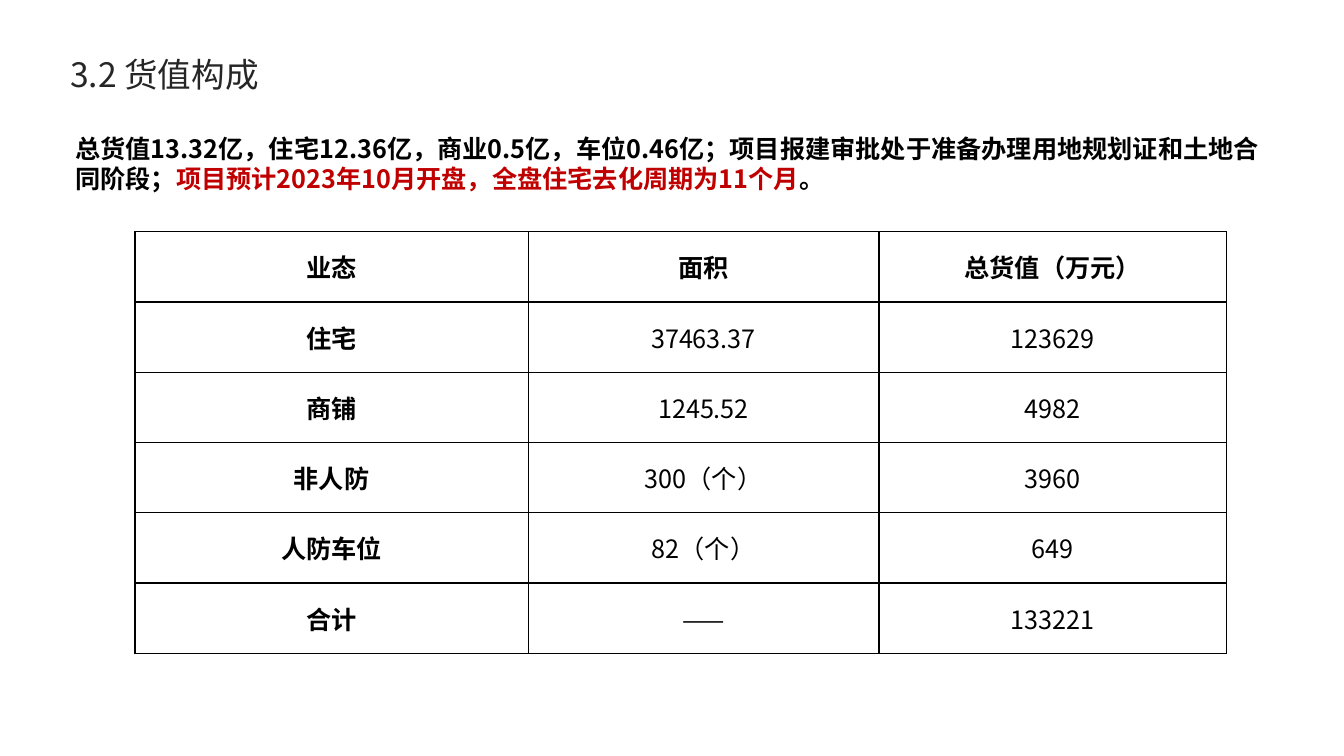
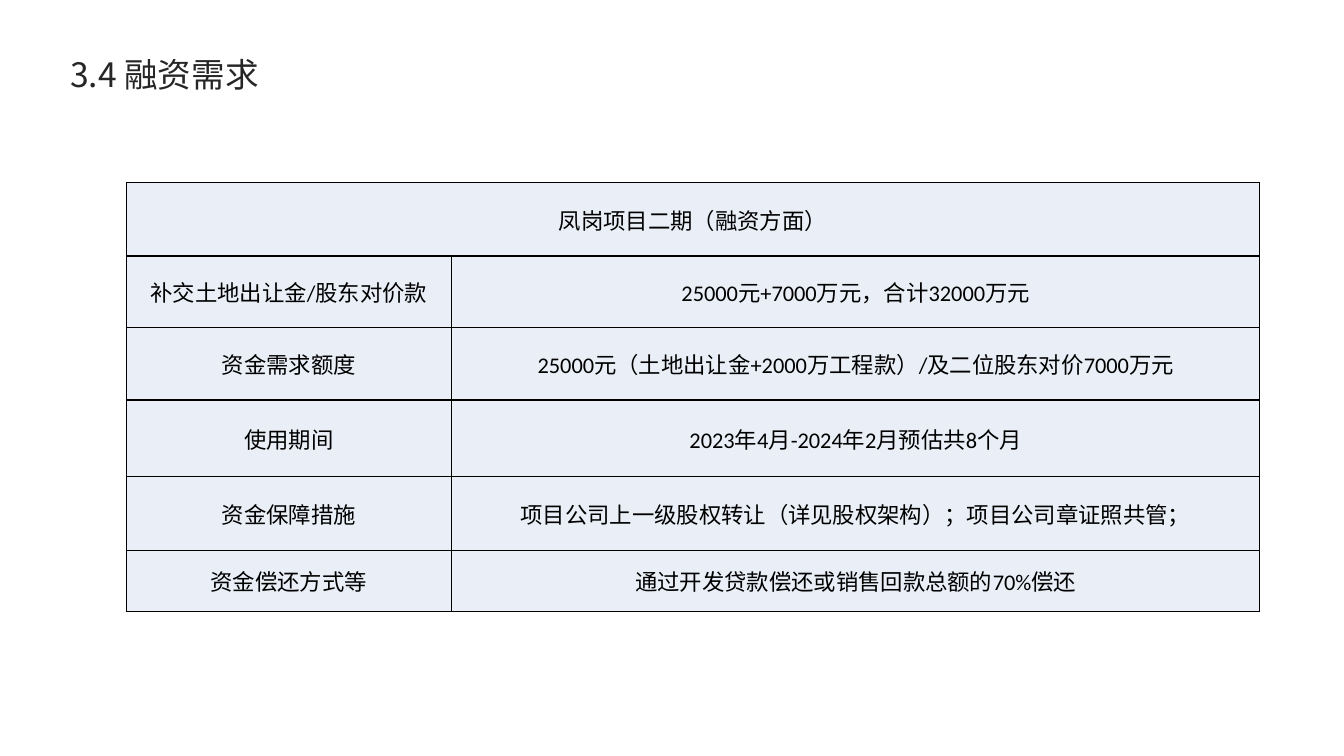
from lxml import etree
from pptx import Presentation
from pptx.dml.color import RGBColor
from pptx.enum.text import MSO_ANCHOR, MSO_AUTO_SIZE, PP_ALIGN
from pptx.oxml.ns import qn
from pptx.util import Cm, Pt

BLACK = RGBColor(0x00, 0x00, 0x00)
WHITE = RGBColor(0xFF, 0xFF, 0xFF)
CHARCOAL = RGBColor(0x26, 0x26, 0x26)
RED = RGBColor(0xC0, 0x00, 0x00)
PALE_BLUE = RGBColor(0xEA, 0xEF, 0xF7)
SANS = "Noto Sans CJK SC"
CALIBRI = "Calibri"
MIDDLE, BOTTOM = MSO_ANCHOR.MIDDLE, MSO_ANCHOR.BOTTOM
CENTER = PP_ALIGN.CENTER
GROW = MSO_AUTO_SIZE.SHAPE_TO_FIT_TEXT
BORDER_SIDES = ("a:lnL", "a:lnR", "a:lnT", "a:lnB")


class Report:
    """Holds the deck, its style and the current page."""

    def __init__(self):
        self.deck = Presentation()
        self.deck.slide_width, self.deck.slide_height = Cm(33.87), Cm(19.05)
        self.page = None

    def add_page(self, title):
        self.page = self.deck.slides.add_slide(self.deck.slide_layouts[6])
        frame = self.text_frame(1.52, 1.07, 25.4, 1.45)
        frame.vertical_anchor = BOTTOM
        para = frame.paragraphs[0]
        para.text = title
        para.line_spacing = 0.9
        self.style(para, 24, color=CHARCOAL)

    def text_frame(self, left, top, width, height):
        box = self.page.shapes.add_textbox(Cm(left), Cm(top), Cm(width), Cm(height))
        box.text_frame.word_wrap = True
        return box.text_frame

    def style(self, para, size, face=SANS, color=BLACK, bold=False):
        font = para.font
        font.size, font.bold = Pt(size), bold
        font.color.rgb = color
        font.name = face
        defaults = para._p.pPr.find(qn("a:defRPr"))
        etree.SubElement(defaults, qn("a:ea"), typeface=SANS)

    def add_summary(self, spans):
        frame = self.text_frame(1.65, 3.23, 30.84, 1.8)
        frame.auto_size = GROW
        para = frame.paragraphs[0]
        self.style(para, 18, bold=True)
        for text, color in spans:
            span = para.add_run()
            span.text = text
            span.font.color.rgb = color

    def add_grid(self, left, top, widths, heights, rows):
        table = self.page.shapes.add_table(
            len(heights), len(widths), Cm(left), Cm(top),
            Cm(sum(widths)), Cm(sum(heights))).table
        table.first_row = table.horz_banding = False
        for column, width in zip(table.columns, widths):
            column.width = Cm(width)
        for row, height in zip(table.rows, heights):
            row.height = Cm(height)
        for row, texts in zip(table.rows, rows):
            for cell, text in zip(row.cells, texts):
                cell.text = text
        return table

    def format_cell(self, cell, fill, size, face=SANS, bold=False):
        cell.vertical_anchor = MIDDLE
        properties = cell._tc.get_or_add_tcPr()
        for side in BORDER_SIDES:
            line = etree.SubElement(properties, qn(side), w=str(Pt(1)))
            paint = etree.SubElement(line, qn("a:solidFill"))
            etree.SubElement(paint, qn("a:srgbClr"), val=str(BLACK))
        cell.fill.solid()
        cell.fill.fore_color.rgb = fill
        para = cell.text_frame.paragraphs[0]
        para.alignment = CENTER
        self.style(para, size, face, bold=bold)

    def add_value_table(self, rows):
        table = self.add_grid(3.4, 5.84, (9.91, 8.84, 8.76), [1.77] * len(rows), rows)
        for row_index, row in enumerate(table.rows):
            for column_index, cell in enumerate(row.cells):
                heading = row_index == 0 or column_index == 0
                self.format_cell(cell, WHITE, 18, bold=heading)

    def add_funding_table(self, heading, rows):
        heights = (1.85, 1.8, 1.83, 1.93, 1.87, 1.52)
        table = self.add_grid(3.18, 4.6, (8.2, 20.37), heights, [(heading,), *rows])
        for cell in table.iter_cells():
            cell.margin_left = cell.margin_right = 0
            cell.margin_top = cell.margin_bottom = 0
            self.format_cell(cell, PALE_BLUE, 16, CALIBRI)
        table.cell(0, 0).merge(table.cell(0, 1))


def main():
    report = Report()

    report.add_page("3.2 货值构成")
    report.add_value_table([
        ("业态", "面积", "总货值（万元）"),
        ("住宅", "37463.37", "123629"),
        ("商铺", "1245.52", "4982"),
        ("非人防", "300（个）", "3960"),
        ("人防车位", "82（个）", "649"),
        ("合计", "——", "133221"),
    ])
    report.add_summary([
        ("总货值13.32亿，住宅12.36亿，商业0.5亿，车位0.46亿；"
         "项目报建审批处于准备办理用地规划证和土地合同阶段；", BLACK),
        ("项目预计2023年10月开盘，全盘住宅去化周期为11个月", RED),
        ("。", BLACK),
    ])

    report.add_page("3.4 融资需求")
    report.add_funding_table("凤岗项目二期（融资方面）", [
        ("补交土地出让金/股东对价款", "25000元+7000万元，合计32000万元"),
        ("资金需求额度", "25000元（土地出让金+2000万工程款）/及二位股东对价7000万元"),
        ("使用期间", "2023年4月-2024年2月预估共8个月"),
        ("资金保障措施", "项目公司上一级股权转让（详见股权架构）；项目公司章证照共管；"),
        ("资金偿还方式等", "通过开发贷款偿还或销售回款总额的70%偿还"),
    ])

    report.deck.save("out.pptx")


if __name__ == "__main__":
    main()
